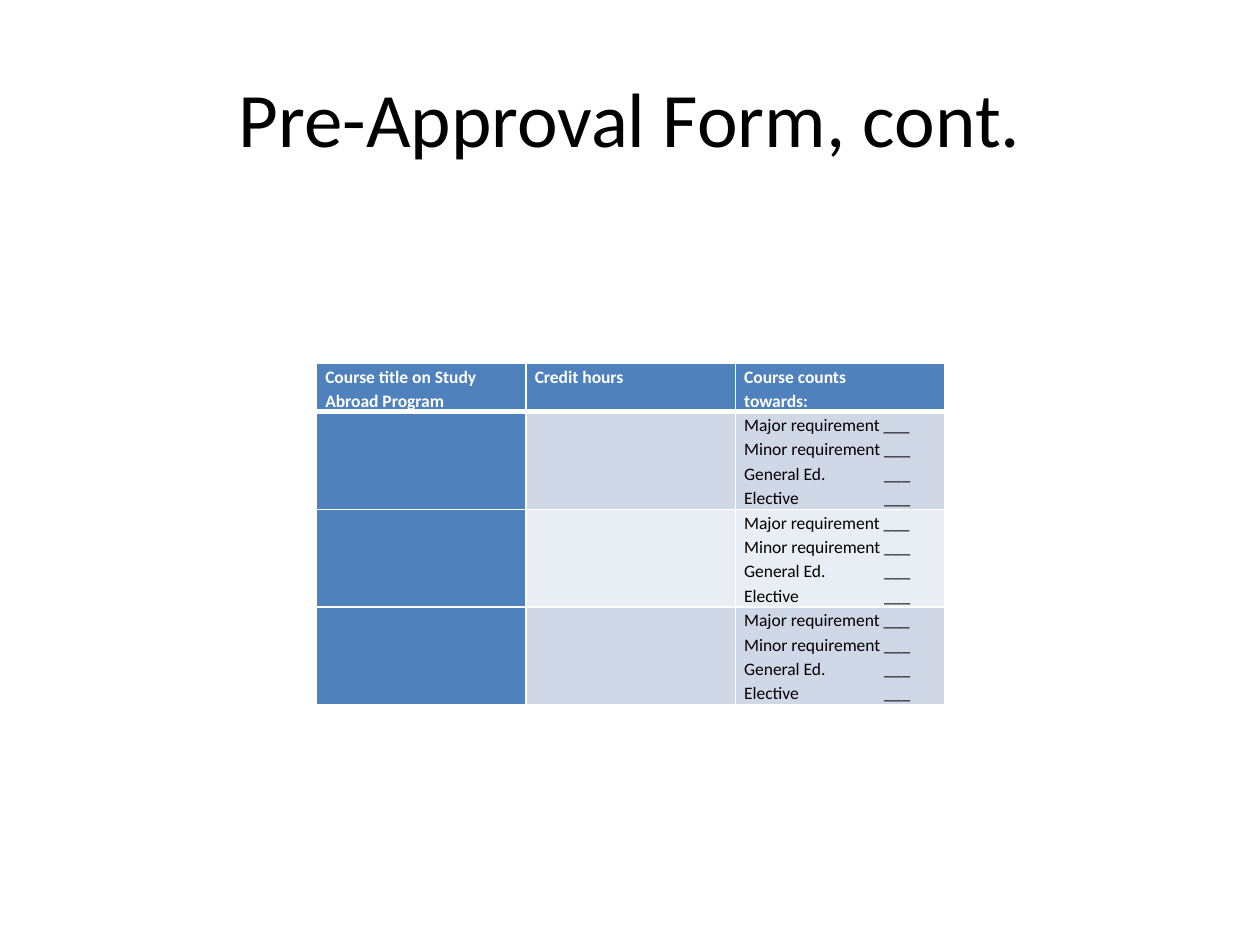
from lxml import etree
from pptx import Presentation
from pptx.dml.color import RGBColor
from pptx.enum.text import MSO_ANCHOR, PP_ALIGN
from pptx.oxml.ns import qn
from pptx.util import Pt

MIDDLE = MSO_ANCHOR.MIDDLE
CENTER = PP_ALIGN.CENTER
COLORS = {"black": "000000", "white": "FFFFFF", "header": "4F81BD",
          "dark_band": "D0D8E8", "light_band": "E9EDF4"}
HEADINGS = [["Course title on Study Abroad Program"], ["Credit hours"],
            ["Course counts", "towards:"]]
CHOICES = ["Major requirement ___", "Minor requirement ___",
           "General Ed.\t___", "Elective\t___"]
ROWS = [HEADINGS] + [[[], [], CHOICES]] * 3
TAB_STOP = Pt(80)


def add_text(para, text, size, color, bold=False):
    span = para.add_run()
    span.text = text
    formats = {"name": "Calibri", "size": Pt(size), "bold": bold}
    for name, value in formats.items():
        setattr(span.font, name, value)
    span.font.color.rgb = RGBColor.from_string(COLORS[color])


def add_border(cell, side, width):
    line = etree.SubElement(cell._tc.get_or_add_tcPr(), qn(f"a:ln{side}"), w=str(Pt(width)))
    fill = etree.SubElement(line, qn("a:solidFill"))
    etree.SubElement(fill, qn("a:srgbClr"), val=COLORS["white"])


deck = Presentation()
deck.slide_width, deck.slide_height = Pt(720), Pt(540)
page = deck.slides.add_slide(deck.slide_layouts[6])

# Title
box = page.shapes.add_textbox(Pt(36), Pt(21.6), Pt(648), Pt(90))
box.text_frame.word_wrap = True
box.text_frame.vertical_anchor = MIDDLE
title = box.text_frame.paragraphs[0]
title.alignment = CENTER
add_text(title, "Pre-Approval Form, cont.", 44, "black")

# Course table
table = page.shapes.add_table(4, 3, Pt(180.9), Pt(207.6), Pt(359.1), Pt(195)).table
for column in table.columns:
    column.width = Pt(119.7)
for r, row in enumerate(ROWS):
    table.rows[r].height = Pt(55.8 if r else 27.6)
    for c, lines in enumerate(row):
        cell = table.cell(r, c)
        margins = {"margin_left": 5, "margin_right": 5, "margin_top": 0, "margin_bottom": 0}
        for name, value in margins.items():
            setattr(cell, name, Pt(value))

        # Thick rule between the header and the body
        widths = {"L": 1, "R": 1, "T": 3 if r == 1 else 1, "B": 3 if r == 0 else 1}
        for side, width in widths.items():
            add_border(cell, side, width)

        # Header row and first column are blue, the rest is banded
        is_header = r == 0 or c == 0
        color = "header" if is_header else "dark_band" if r % 2 else "light_band"
        cell.fill.solid()
        cell.fill.fore_color.rgb = RGBColor.from_string(COLORS[color])

        for i, text in enumerate(lines):
            frame = cell.text_frame
            para = frame.add_paragraph() if i else frame.paragraphs[0]
            para.line_spacing = 1.15
            if "\t" in text:
                tabs = etree.SubElement(para._p.get_or_add_pPr(), qn("a:tabLst"))
                etree.SubElement(tabs, qn("a:tab"), pos=str(TAB_STOP), algn="l")
            add_text(para, text, 10, "white" if is_header else "black", is_header)

deck.save("out.pptx")
